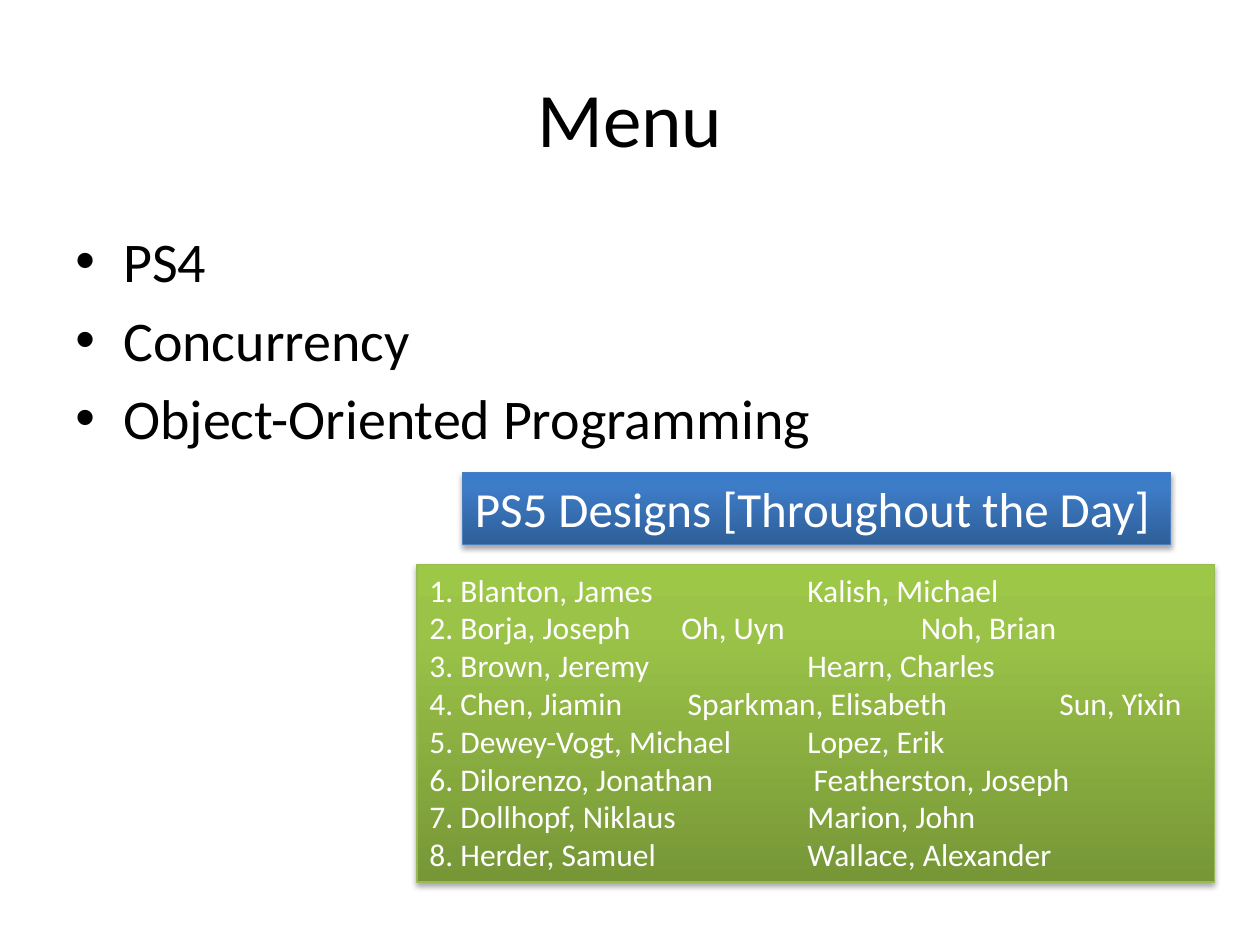
import lxml.etree
import pptx
import pptx.dml.color
import pptx.enum.shapes
import pptx.enum.text
import pptx.oxml.ns
import pptx.util
from pptx.util import Inches

RGBColor = pptx.dml.color.RGBColor
BLACK = RGBColor(0x00, 0x00, 0x00)
WHITE = RGBColor(0xFF, 0xFF, 0xFF)
BLUE_LINE = RGBColor(0x4B, 0x7E, 0xBC)
BLUE_STOPS = [(0, RGBColor(0x2F, 0x5F, 0x99)), (80, RGBColor(0x3D, 0x7C, 0xC7)),
              (100, RGBColor(0x3A, 0x7C, 0xCB))]
GREEN_LINE = RGBColor(0x98, 0xB9, 0x55)
GREEN_STOPS = [(0, RGBColor(0x77, 0x97, 0x37)), (80, RGBColor(0x9B, 0xC3, 0x48)),
               (100, RGBColor(0x9D, 0xC7, 0x46))]

TOPICS = ["PS4", "Concurrency", "Object-Oriented Programming"]
TEAMS = [
    ("1. Blanton, James\tKalish, Michael", [3]),
    ("2. Borja, Joseph\tOh, Uyn\tNoh, Brian", [2, 3.9]),
    ("3. Brown, Jeremy\tHearn, Charles", [3]),
    ("4. Chen, Jiamin\tSparkman, Elisabeth\tSun, Yixin", [2.05, 5]),
    ("5. Dewey-Vogt, Michael\tLopez, Erik", [3]),
    ("6. Dilorenzo, Jonathan\tFeatherston, Joseph", [3.05]),
    ("7. Dollhopf, Niklaus\tMarion, John", [3]),
    ("8. Herder, Samuel\tWallace, Alexander", [3]),
]


def write_lines(frame, lines, size, color, align):
    frame.text = "\n".join(lines)
    for paragraph in frame.paragraphs:
        paragraph.alignment = align
        font = paragraph.runs[0].font
        font.name = "Calibri"
        font.size = pptx.util.Pt(size)
        font.color.rgb = color


def add_panel(slide, box, stops, line_color, lines, size):
    panel = slide.shapes.add_shape(
        pptx.enum.shapes.MSO_SHAPE.RECTANGLE, *[Inches(length) for length in box])
    panel.line.color.rgb = line_color
    panel.line.width = pptx.util.Pt(0.75)
    panel.fill.gradient()
    panel.fill.gradient_angle = 90
    qn = pptx.oxml.ns.qn
    properties = panel.element.spPr
    stop_list = properties.find(".//" + qn("a:gsLst"))
    for old_stop in list(stop_list):
        stop_list.remove(old_stop)
    for position, color in stops:
        stop = lxml.etree.SubElement(stop_list, qn("a:gs"), pos=str(position * 1000))
        lxml.etree.SubElement(stop, qn("a:srgbClr"), val=str(color))
    panel.shadow.inherit = False
    shadow = lxml.etree.SubElement(
        properties.find(qn("a:effectLst")), qn("a:outerShdw"),
        blurRad=str(pptx.util.Pt(3.1)), dist=str(pptx.util.Pt(1.8)),
        dir="5400000", rotWithShape="0")
    shadow_color = lxml.etree.SubElement(shadow, qn("a:srgbClr"), val="000000")
    lxml.etree.SubElement(shadow_color, qn("a:alpha"), val="35000")
    frame = panel.text_frame
    frame.vertical_anchor = pptx.enum.text.MSO_ANCHOR.TOP
    frame.auto_size = pptx.enum.text.MSO_AUTO_SIZE.SHAPE_TO_FIT_TEXT
    write_lines(frame, lines, size, WHITE, pptx.enum.text.PP_ALIGN.LEFT)
    return frame


presentation = pptx.Presentation()
presentation.slide_width = Inches(10)
presentation.slide_height = Inches(7.5)
slide = presentation.slides.add_slide(presentation.slide_layouts[5])

title = slide.shapes.title
title.left, title.top = Inches(0.5), Inches(0.3)
title.width, title.height = Inches(9), Inches(1.25)
title.text_frame.vertical_anchor = pptx.enum.text.MSO_ANCHOR.MIDDLE
write_lines(title.text_frame, ["Menu"], 44, BLACK, pptx.enum.text.PP_ALIGN.CENTER)

topics = slide.shapes.add_textbox(Inches(0.5), Inches(1.75), Inches(9), Inches(4.95)).text_frame
topics.word_wrap = True
write_lines(topics, TOPICS, 32, BLACK, pptx.enum.text.PP_ALIGN.LEFT)
for paragraph in topics.paragraphs:
    paragraph.space_before = pptx.util.Pt(6.4)
    bullet_properties = paragraph._p.get_or_add_pPr()
    bullet_properties.set("marL", str(Inches(0.38)))
    bullet_properties.set("indent", str(Inches(-0.38)))
    lxml.etree.SubElement(bullet_properties, pptx.oxml.ns.qn("a:buFont"), typeface="Arial")
    lxml.etree.SubElement(bullet_properties, pptx.oxml.ns.qn("a:buChar"), char="•")

heading = add_panel(slide, (3.67, 3.75, 5.62, 0.57), BLUE_STOPS, BLUE_LINE,
                    ["PS5 Designs [Throughout the Day]"], 28)
heading.word_wrap = False

schedule = add_panel(slide, (3.31, 4.48, 6.33, 2.52), GREEN_STOPS, GREEN_LINE,
                     [names for names, _ in TEAMS], 18)
schedule.word_wrap = True
for paragraph, (_, stops) in zip(schedule.paragraphs, TEAMS):
    tab_list = lxml.etree.SubElement(paragraph._p.get_or_add_pPr(), pptx.oxml.ns.qn("a:tabLst"))
    for stop in stops:
        lxml.etree.SubElement(tab_list, pptx.oxml.ns.qn("a:tab"), pos=str(Inches(stop)), algn="l")

presentation.save("out.pptx")
